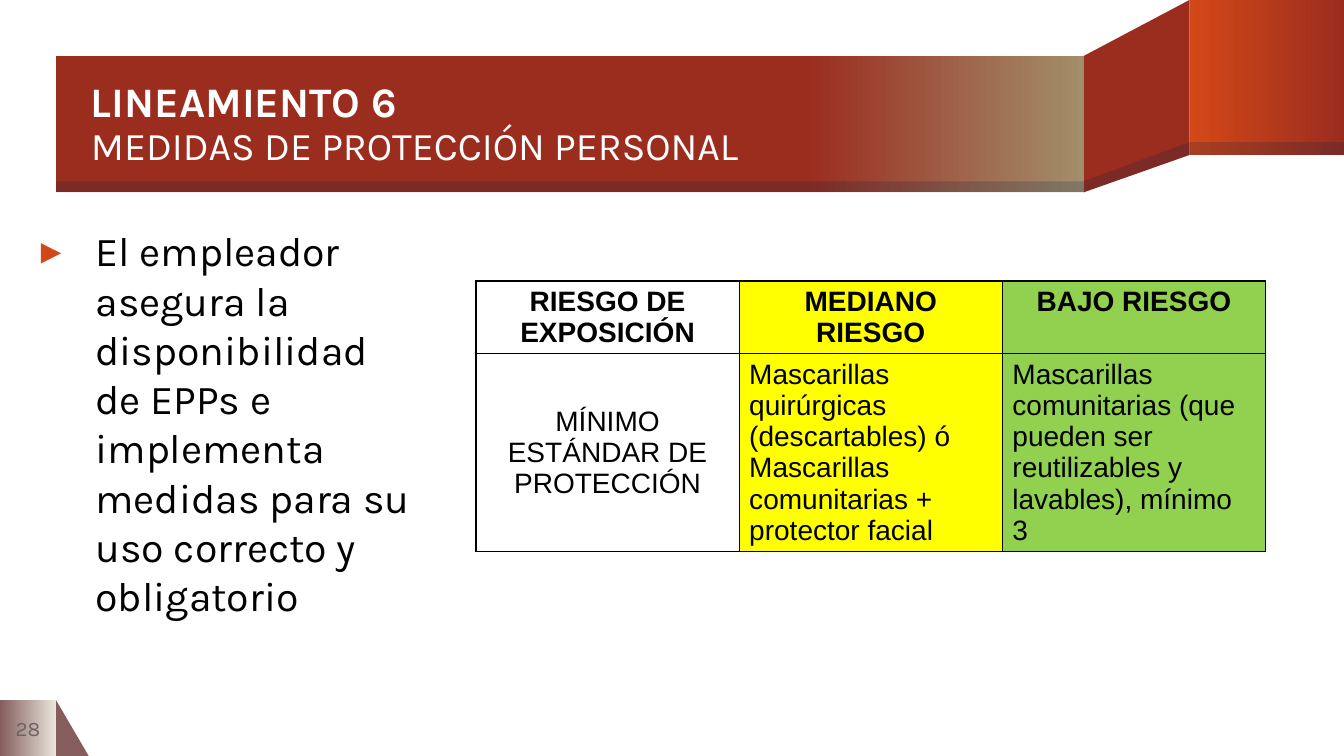
from dataclasses import dataclass

from lxml.etree import SubElement
from pptx import Presentation
from pptx.dml.color import RGBColor
from pptx.enum.shapes import MSO_SHAPE
from pptx.enum.text import MSO_ANCHOR, MSO_AUTO_SIZE, PP_ALIGN
from pptx.oxml.ns import qn
from pptx.util import Pt


@dataclass(frozen=True)
class Theme:
    brick: str = "9B2D1F"
    orange: str = "D34817"
    khaki: str = "A28E6A"
    mauve: str = "855D5D"
    cream: str = "E9E5DC"
    navy: str = "001F46"
    gray: str = "696464"
    white: str = "FFFFFF"
    black: str = "000000"
    yellow: str = "FFFF00"
    green: str = "92D050"
    heading_font: str = "Karla"
    table_font: str = "Arial"
    title_size: float = 30
    subtitle_size: float = 28
    body_size: float = 29.3
    number_size: float = 14.7
    table_size: float = 20


THEME = Theme()
BANNER_LEFT, FOLD_LEFT, FOLD_RIGHT, SLIDE_RIGHT = 40, 774, 849.6, 960
FLAP_BOTTOM, BANNER_BOTTOM = 110.7, 137.4
FLAP_SHADE, BANNER_SHADE = 101.5, 129.6
FOOTER_TOP, SLIDE_BOTTOM = 500, 540

RISK_TABLE = [
    [["RIESGO DE EXPOSICIÓN"], ["MEDIANO RIESGO"], ["BAJO RIESGO"]],
    [["MÍNIMO ESTÁNDAR DE PROTECCIÓN"],
     ["Mascarillas quirúrgicas (descartables) ó",
      "Mascarillas comunitarias + protector facial"],
     ["Mascarillas comunitarias (que pueden ser reutilizables y lavables), mínimo 3"]],
]


def rgb(color):
    return RGBColor.from_string(color)


def apply_format(target, values):
    for attribute, value in values.items():
        setattr(target, attribute, value)


def style_font(font, name, size, color, bold=False):
    apply_format(font, {"name": name, "size": Pt(size), "bold": bold})
    font.color.rgb = rgb(color)


def paint(shape, color, opacity=100):
    shape.shadow.inherit = False
    shape.line.fill.background()
    shape.fill.solid()
    shape.fill.fore_color.rgb = rgb(color)
    if opacity < 100:
        color_node = shape.element.spPr.find(qn("a:solidFill"))[0]
        SubElement(color_node, qn("a:alpha"), val=str(opacity * 1000))


def paint_gradient(shape, start, end, start_at=0):
    """Fade left to right, keeping the start colour flat up to start_at."""
    paint(shape, start)
    shape.fill.gradient()
    shape.fill.gradient_angle = 0
    for stop, color, position in zip(shape.fill.gradient_stops, (start, end), (start_at, 1)):
        stop.color.rgb = rgb(color)
        stop.position = position


def add_block(slide, left, top, right, bottom, preset=MSO_SHAPE.RECTANGLE):
    return slide.shapes.add_shape(preset, Pt(left), Pt(top), Pt(right - left), Pt(bottom - top))


def add_fold(slide, right_top, left_top):
    """Slanted panel that joins the banner to the raised flap."""
    outline = slide.shapes.build_freeform(Pt(FOLD_RIGHT), Pt(right_top))
    outline.add_line_segments([(Pt(x), Pt(y)) for x, y in (
        (FOLD_LEFT, left_top), (FOLD_LEFT, BANNER_BOTTOM), (FOLD_RIGHT, FLAP_BOTTOM))])
    return outline.convert_to_shape()


def add_ribbon(slide):
    paint(add_fold(slide, 0, BANNER_LEFT), THEME.brick)
    flap = add_block(slide, FOLD_RIGHT, 0, SLIDE_RIGHT, FLAP_BOTTOM)
    paint_gradient(flap, THEME.orange, THEME.brick)
    banner = add_block(slide, BANNER_LEFT, BANNER_LEFT, FOLD_LEFT, BANNER_BOTTOM)
    paint_gradient(banner, THEME.brick, THEME.khaki, 0.73)
    for shade in (
        add_fold(slide, FLAP_SHADE, BANNER_SHADE),
        add_block(slide, FOLD_RIGHT, FLAP_SHADE, SLIDE_RIGHT, FLAP_BOTTOM),
        add_block(slide, BANNER_LEFT, BANNER_SHADE, FOLD_LEFT, BANNER_BOTTOM),
    ):
        paint(shade, THEME.navy, 20)


def set_frame(shape, left, top, width, height, anchor):
    apply_format(shape, {"left": Pt(left), "top": Pt(top),
                         "width": Pt(width), "height": Pt(height)})
    apply_format(shape.text_frame, {
        "margin_left": 0, "margin_top": 0, "margin_right": 0, "margin_bottom": 0,
        "word_wrap": True, "auto_size": MSO_AUTO_SIZE.NONE, "vertical_anchor": anchor})


def bring_to_front(shape):
    shape.element.getparent().append(shape.element)


def add_page_corner(slide, number):
    corner = add_block(slide, BANNER_LEFT, FOOTER_TOP, 63.4, SLIDE_BOTTOM,
                       MSO_SHAPE.RIGHT_TRIANGLE)
    paint(corner, THEME.mauve)
    tab = add_block(slide, 0, FOOTER_TOP, BANNER_LEFT, SLIDE_BOTTOM)
    paint_gradient(tab, THEME.mauve, THEME.cream)
    set_frame(tab, 0, FOOTER_TOP, 40, 40, MSO_ANCHOR.MIDDLE)
    paragraph = tab.text_frame.paragraphs[0]
    paragraph.alignment = PP_ALIGN.CENTER
    paragraph.text = number
    style_font(paragraph.runs[0].font, THEME.heading_font, THEME.number_size, THEME.gray)


def fill_title(title, heading, subject):
    set_frame(title, 65, 41, 709, 96.5, MSO_ANCHOR.MIDDLE)
    paragraph = title.text_frame.paragraphs[0]
    apply_format(paragraph, {"alignment": PP_ALIGN.LEFT, "line_spacing": 0.9})
    paragraph.text = f"{heading}\v{subject}"
    sizes = (THEME.title_size, THEME.subtitle_size)
    for run, size, bold in zip(paragraph.runs, sizes, (True, False)):
        style_font(run.font, THEME.heading_font, size, THEME.white, bold)
    bring_to_front(title)


def fill_body(body, statement):
    set_frame(body, 20.2, 161.3, 276.5, 184.3, MSO_ANCHOR.TOP)
    paragraph = body.text_frame.paragraphs[0]
    paragraph.text = statement
    apply_format(paragraph, {"alignment": PP_ALIGN.LEFT, "space_before": Pt(8)})
    style_font(paragraph.runs[0].font, THEME.heading_font, THEME.body_size, THEME.black)
    properties = paragraph._p.get_or_add_pPr()
    properties.set("marL", str(Pt(48)))
    properties.set("indent", str(Pt(-39)))
    SubElement(SubElement(properties, qn("a:buClr")), qn("a:srgbClr"), val=THEME.orange)
    SubElement(properties, qn("a:buFont"), typeface=THEME.table_font)
    SubElement(properties, qn("a:buChar"), char="▸")
    bring_to_front(body)


def add_borders(cell):
    properties = cell._tc.get_or_add_tcPr()
    for position, side in enumerate(("a:lnL", "a:lnR", "a:lnT", "a:lnB")):
        line = SubElement(properties, qn(side), w=str(Pt(1)))
        SubElement(SubElement(line, qn("a:solidFill")), qn("a:srgbClr"), val=THEME.black)
        properties.insert(position, line)


def fill_cell(cell, lines, color, centered, bold):
    cell.text = "\n".join(lines)
    for paragraph in cell.text_frame.paragraphs:
        paragraph.alignment = PP_ALIGN.CENTER if centered else PP_ALIGN.LEFT
        style_font(paragraph.runs[0].font, THEME.table_font, THEME.table_size,
                   THEME.black, bold)
    if color:
        cell.fill.solid()
        cell.fill.fore_color.rgb = rgb(color)
    else:
        cell.fill.background()
    add_borders(cell)


def add_risk_table(slide):
    table = slide.shapes.add_table(2, 3, Pt(340), Pt(200.7), Pt(564), Pt(193)).table
    apply_format(table, {"first_row": False, "horz_banding": False})
    for row, height in zip(table.rows, (52, 141)):
        row.height = Pt(height)
    column_colors = (None, THEME.yellow, THEME.green)
    for r, entries in enumerate(RISK_TABLE):
        for c, (lines, color) in enumerate(zip(entries, column_colors)):
            fill_cell(table.cell(r, c), lines, color, r == 0 or c == 0, r == 0)
    table.cell(1, 0).vertical_anchor = MSO_ANCHOR.MIDDLE


def main():
    deck = Presentation()
    apply_format(deck, {"slide_width": Pt(SLIDE_RIGHT), "slide_height": Pt(SLIDE_BOTTOM)})
    slide = deck.slides.add_slide(deck.slide_layouts[1])
    add_page_corner(slide, "28")
    add_ribbon(slide)
    fill_title(slide.shapes.title, "LINEAMIENTO 6", "MEDIDAS DE PROTECCIÓN PERSONAL")
    fill_body(slide.placeholders[1], "El empleador asegura la disponibilidad de EPPs e "
              "implementa medidas para su uso correcto y obligatorio")
    add_risk_table(slide)
    deck.save("out.pptx")


if __name__ == "__main__":
    main()
